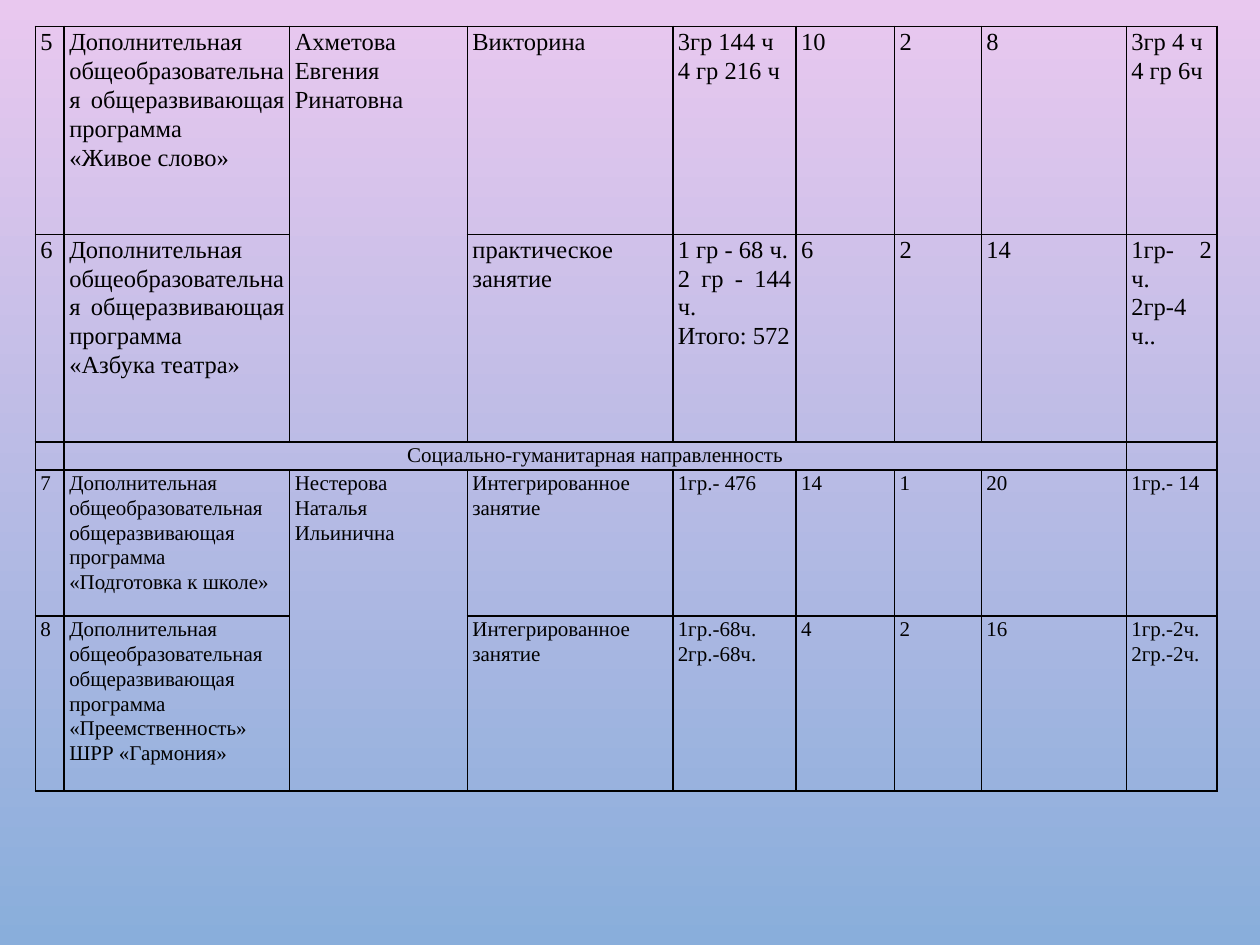
from lxml import etree
from pptx import Presentation
from pptx.dml.color import RGBColor
from pptx.enum.text import PP_ALIGN
from pptx.oxml.ns import qn
from pptx.util import Inches, Pt

JUSTIFY, CENTER, LEFT = PP_ALIGN.JUSTIFY, PP_ALIGN.CENTER, PP_ALIGN.LEFT
FONT = "Times New Roman"
BLACK = "000000"
COLUMNS = [0.23, 1.79, 1.41, 1.63, 0.98, 0.78, 0.69, 1.15, 0.72]
ROWS = [1.65, 1.65, 0.22, 1.16, 1.39]
SIZES = [14, 14, 12, 12, 12]
SECTION_ROW = 2
LAST_COLUMN = len(COLUMNS) - 1
MERGES = [((0, 2), (1, 2)), ((2, 1), (2, 7)), ((3, 2), (4, 2))]
PROGRAM = "Дополнительная общеобразовательная общеразвивающая программа\n"

# A line break inside a cell starts a new paragraph.
CONTENT = [
    ["5", PROGRAM + "«Живое слово»", "Ахметова Евгения Ринатовна", "Викторина",
     "3гр 144 ч\n4 гр 216 ч", "10", "2", "8", "3гр 4 ч\n4 гр 6ч"],
    ["6", PROGRAM + "«Азбука театра»", "", "практическое занятие",
     "1 гр - 68 ч.\n2 гр - 144 ч.\nИтого: 572", "6", "2", "14", "1гр- 2 ч.\n2гр-4 ч.."],
    ["", "Социально-гуманитарная направленность", "", "", "", "", "", "", ""],
    ["7", PROGRAM + "«Подготовка к школе»", "Нестерова Наталья Ильинична",
     "Интегрированное занятие", "1гр.- 476", "14", "1", "20", "1гр.- 14"],
    ["8", PROGRAM + "«Преемственность» ШРР «Гармония»", "", "Интегрированное занятие",
     "1гр.-68ч.\n2гр.-68ч.", "4", "2", "16", "1гр.-2ч.\n2гр.-2ч."],
]


def color(value):
    return RGBColor.from_string(value)


def add_borders(cell):
    properties = cell._tc.get_or_add_tcPr()
    for side in ("a:lnL", "a:lnR", "a:lnT", "a:lnB"):
        line = etree.SubElement(properties, qn(side), w=str(Pt(1)))
        fill = etree.SubElement(line, qn("a:solidFill"))
        etree.SubElement(fill, qn("a:srgbClr"), val=BLACK)


deck = Presentation()
deck.slide_width, deck.slide_height = Inches(10), Inches(7.5)
page = deck.slides.add_slide(deck.slide_layouts[6])

backdrop = page.background.fill
backdrop.gradient()
backdrop.gradient_angle = 270
for stop, value in zip(backdrop.gradient_stops, ("E9C8EF", "89AEDB")):
    stop.color.rgb = color(value)

table = page.shapes.add_table(
    len(ROWS), len(COLUMNS), Inches(0.28), Inches(0.21),
    Inches(sum(COLUMNS)), Inches(sum(ROWS))).table
table.first_row = table.horz_banding = False
for column, width in zip(table.columns, COLUMNS):
    column.width = Inches(width)
for row, height in zip(table.rows, ROWS):
    row.height = Inches(height)
for start, end in MERGES:
    table.cell(*start).merge(table.cell(*end))

cell_format = {"margin_left": Inches(0.04), "margin_right": Inches(0.04),
               "margin_top": 0, "margin_bottom": 0}
for row_index, (texts, size) in enumerate(zip(CONTENT, SIZES)):
    for column_index, text in enumerate(texts):
        cell = table.cell(row_index, column_index)
        for name, value in cell_format.items():
            setattr(cell, name, value)
        add_borders(cell)
        cell.fill.background()

        if row_index == SECTION_ROW:
            alignment = CENTER
        elif row_index > SECTION_ROW and column_index == LAST_COLUMN:
            alignment = LEFT
        else:
            alignment = JUSTIFY
        cell.text = text
        for para in cell.text_frame.paragraphs:
            para.alignment = alignment
            para.line_spacing = 1.07
            for span in para.runs:
                for name, value in {"name": FONT, "size": Pt(size)}.items():
                    setattr(span.font, name, value)
                span.font.color.rgb = color(BLACK)
            if not text:  # keeps empty cells from stretching their row
                etree.SubElement(para._p, qn("a:endParaRPr"), sz=str(size * 100))

deck.save("out.pptx")
